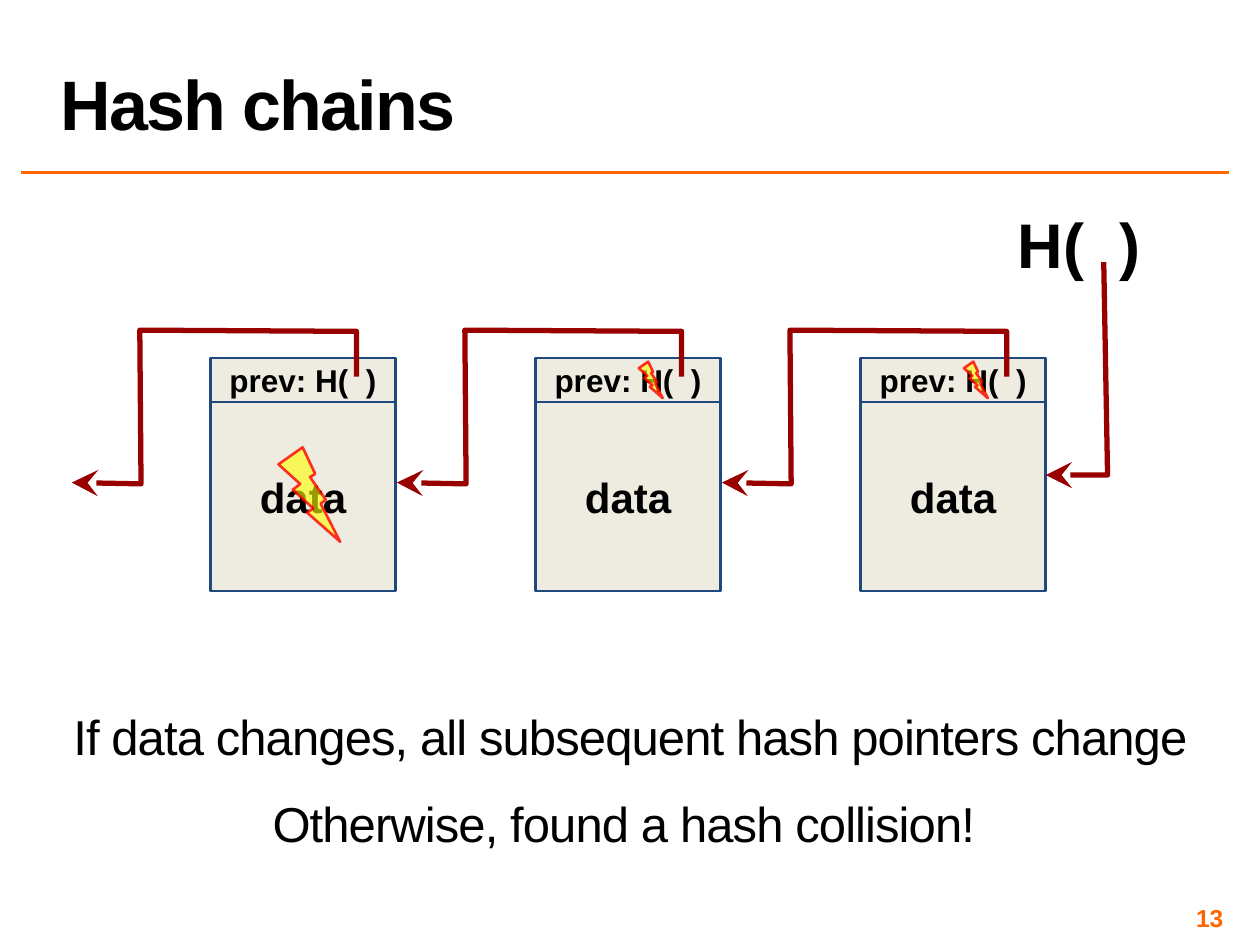
"""Builds the hash chains slide."""
import pptx
import pptx.dml.color
import pptx.enum.shapes
import pptx.enum.text
import pptx.oxml.ns
import pptx.util
from lxml import etree

PX = 9144
FONT = "Arial"
BLACK, ORANGE, CRIMSON = "000000", "FF6600", "990000"
SAND, NAVY, YELLOW, RED = "EEECE1", "1F497D", "FFFF00", "FF0000"

TITLE = "Hash chains"
CONCLUSIONS = [
    "If data changes, all subsequent hash pointers change",
    "Otherwise, found a hash collision! ",
]
PREV, DATA, HEAD_HASH, PAGE = "prev: H(  )", "data", "H(  )", "13"

BLOCK_LEFT, BLOCK_STEP, BLOCK_COUNT = 167, 258, 3
BLOCK_WIDTH, PREV_TOP, PREV_HEIGHT, DATA_HEIGHT = 147, 284, 35, 150
POINTER = [(116, 299), (116, 263), (-56, 262), (-55, 384), (-110, 383)]
HEAD_POINTER = [(876, 208), (879, 377), (830, 377)]
BOLTS = [(221, 355, 49, 75), (507, 287, 19, 29), (765, 287, 19, 29)]

SHAPE = pptx.enum.shapes.MSO_SHAPE
ALIGN = pptx.enum.text.PP_ALIGN
ANCHOR = pptx.enum.text.MSO_ANCHOR


def emu(*lengths):
    return [length * PX for length in lengths]


def color(value):
    return pptx.dml.color.RGBColor.from_string(value)


def add_xml(parent, tag, **attributes):
    return etree.SubElement(parent, pptx.oxml.ns.qn(tag), attributes)


def place(shape, box):
    shape.left, shape.top, shape.width, shape.height = emu(*box)


def write(shape, lines, size, align, anchor, inset, bold=True, ink=BLACK, spacing=0):
    frame = shape.text_frame
    frame.text = "\n".join(lines)
    frame.word_wrap = True
    frame.auto_size = pptx.enum.text.MSO_AUTO_SIZE.NONE
    frame.vertical_anchor = anchor
    frame.margin_left = frame.margin_right = inset[0] * PX
    frame.margin_top = frame.margin_bottom = inset[1] * PX
    for paragraph in frame.paragraphs:
        paragraph.alignment = align
        for run in paragraph.runs:
            run.font.name = FONT
            run.font.size = pptx.util.Pt(size)
            run.font.bold = bold
            run.font.color.rgb = color(ink)
            if spacing:
                run.font._element.set("spc", str(spacing))


def style(shape, fill, line, width):
    shape.shadow.inherit = False
    if fill:
        shape.fill.solid()
        shape.fill.fore_color.rgb = color(fill)
    else:
        shape.fill.background()
    shape.line.color.rgb = color(line)
    shape.line.width = pptx.util.Pt(width)


def add_box(shapes, box, label, size):
    cell = shapes.add_shape(SHAPE.RECTANGLE, *emu(*box))
    style(cell, SAND, NAVY, 1.5)
    write(cell, [label], size, ALIGN.CENTER, ANCHOR.MIDDLE, (10, 10))


def add_bolt(shapes, box):
    bolt = shapes.add_shape(SHAPE.LIGHTNING_BOLT, *emu(*box))
    style(bolt, YELLOW, RED, 1.5)
    fills = bolt._element.spPr.iter(pptx.oxml.ns.qn("a:srgbClr"))
    for shade, alpha in zip(list(fills), ("60000", "80000")):
        add_xml(shade, "a:alpha", val=alpha)


def add_pointer(shapes, points):
    builder = shapes.build_freeform(*points[0], scale=PX)
    builder.add_line_segments(points[1:], close=False)
    pointer = builder.convert_to_shape()
    style(pointer, None, CRIMSON, 3)
    add_xml(pointer.line._get_or_add_ln(), "a:tailEnd", type="stealth", w="lg", len="lg")


def main():
    deck = pptx.Presentation()
    deck.slide_width, deck.slide_height = emu(1000, 750)
    slide = deck.slides.add_slide(deck.slide_layouts[1])
    shapes = slide.shapes

    rule = shapes.add_connector(
        pptx.enum.shapes.MSO_CONNECTOR.STRAIGHT, *emu(17, 137, 975, 137))
    rule.line.color.rgb = color(ORANGE)
    rule.line.width = pptx.util.Pt(2)
    add_xml(rule._element.spPr, "a:effectLst")

    title, body = shapes.title, slide.placeholders[1]
    place(title, (38, 2, 937, 117))
    write(title, [TITLE], 40, ALIGN.LEFT, ANCHOR.BOTTOM, (10, 5), spacing=-100)
    title.text_frame.paragraphs[0].line_spacing = 0.8

    place(body, (0, 557, 1000, 137))
    write(body, CONCLUSIONS, 28, ALIGN.CENTER, ANCHOR.TOP, (4, 4), bold=False, spacing=-50)
    for paragraph in body.text_frame.paragraphs:
        paragraph.space_before = paragraph.space_after = pptx.util.Pt(8)
        properties = paragraph._p.get_or_add_pPr()
        properties.set("marL", "0")
        properties.set("indent", "0")
        add_xml(properties, "a:buNone")

    page = shapes.add_textbox(*emu(742, 717, 233, 23))
    write(page, [PAGE], 14, ALIGN.RIGHT, ANCHOR.MIDDLE, (4, 4), ink=ORANGE)

    lefts = [BLOCK_LEFT + i * BLOCK_STEP for i in range(BLOCK_COUNT)]
    for left in lefts:
        data_top = PREV_TOP + PREV_HEIGHT
        add_box(shapes, (left, data_top, BLOCK_WIDTH, DATA_HEIGHT), DATA, 24)
        add_box(shapes, (left, PREV_TOP, BLOCK_WIDTH, PREV_HEIGHT), PREV, 18)

    head = shapes.add_textbox(*emu(779, 153, 155, 50))
    write(head, [HEAD_HASH], 36, ALIGN.CENTER, ANCHOR.TOP, (10, 10))

    for box in BOLTS:
        add_bolt(shapes, box)
    for left in lefts:
        add_pointer(shapes, [(left + x, y) for x, y in POINTER])
    add_pointer(shapes, HEAD_POINTER)

    deck.save("out.pptx")


if __name__ == "__main__":
    main()
